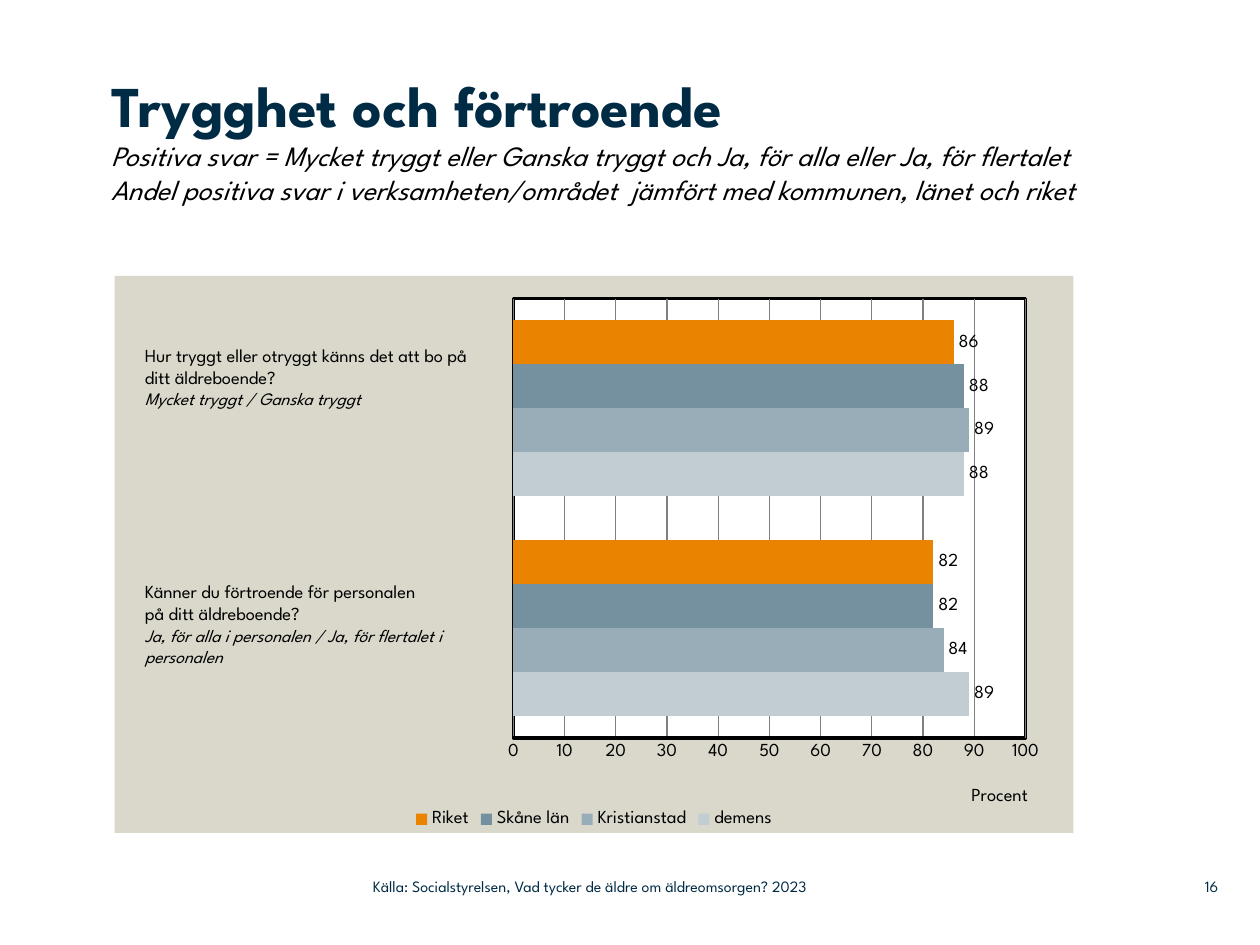
from lxml import etree
from pptx import Presentation
from pptx.chart.data import CategoryChartData
from pptx.dml.color import RGBColor
from pptx.enum import chart as ch, text
from pptx.oxml import ns
from pptx.util import Cm, Pt

FONT = "League Spartan"
NAVY = RGBColor(0x00, 0x2B, 0x45)
BLACK = RGBColor(0, 0, 0)
WHITE = RGBColor(0xFF, 0xFF, 0xFF)
GREY = RGBColor(0x80, 0x80, 0x80)
SAND = RGBColor(0xDA, 0xD7, 0xCB)
PALE = RGBColor(0xC2, 0xCD, 0xD3)
MIST = RGBColor(0x99, 0xAD, 0xB9)
SLATE = RGBColor(0x75, 0x90, 0x9F)
ORANGE = RGBColor(0xE9, 0x83, 0x00)


def style(font, size, color=BLACK, italic=False, bold=False):
    font.name, font.size = FONT, Pt(size)
    font.color.rgb = color
    font.italic, font.bold = italic, bold


def place(parent, index, **parts):
    """Put a manual c:layout into a chart element."""
    for old in parent.findall(ns.qn("c:layout")):
        parent.remove(old)
    layout = etree.Element(ns.qn("c:layout"))
    manual = etree.SubElement(layout, ns.qn("c:manualLayout"))
    for name, value in parts.items():
        etree.SubElement(manual, ns.qn("c:" + name)).set("val", str(value))
    parent.insert(index, layout)


prs = Presentation()
prs.slide_width, prs.slide_height = Cm(25.4), Cm(19.05)
slide = prs.slides.add_slide(prs.slide_layouts[5])

# Title
title = slide.shapes.title
title.left, title.top, title.width, title.height = Cm(2.24), Cm(1.4), Cm(19.69), Cm(4.17)
frame = title.text_frame
frame.margin_left = frame.margin_right = frame.margin_top = frame.margin_bottom = 0
frame.vertical_anchor = text.MSO_ANCHOR.TOP
frame.auto_size = text.MSO_AUTO_SIZE.NONE
head = frame.paragraphs[0]
head.alignment = text.PP_ALIGN.LEFT
run = head.add_run()
run.text = "Trygghet och förtroende"
style(run.font, 33, NAVY, bold=True)
for line in (
    "Positiva svar = Mycket tryggt eller Ganska tryggt och Ja, för alla eller Ja, för flertalet",
    "Andel positiva svar i verksamheten/området  jämfört med kommunen, länet och riket",
):
    head.add_line_break()
    run = head.add_run()
    run.text = line
    style(run.font, 16, italic=True)

# Chart
data = CategoryChartData()
data.categories = ["1", "2"]
rows = [
    ("demens", (89, 88), PALE),
    ("Kristianstad", (84, 89), MIST),
    ("Skåne län", (82, 88), SLATE),
    ("Riket", (82, 86), ORANGE),
]
for name, values, color in rows:
    data.add_series(name, values)
chart = slide.shapes.add_chart(
    ch.XL_CHART_TYPE.BAR_CLUSTERED, Cm(2.31), Cm(5.56), Cm(19.33), Cm(11.23), data
).chart
style(chart.font, 10.5)
chart.has_title = False
chart.has_legend = True
chart.legend.position = ch.XL_LEGEND_POSITION.BOTTOM
chart.legend.include_in_layout = False
style(chart.legend.font, 10.5)

plot = chart.plots[0]
plot.gap_width, plot.overlap = 100, 0
plot.vary_by_categories = False
for series, (name, values, color) in zip(plot.series, rows):
    series.format.fill.solid()
    series.format.fill.fore_color.rgb = color
    labels = series.data_labels
    labels.show_value = True
    labels.position = ch.XL_LABEL_POSITION.OUTSIDE_END
    style(labels.font, 10.5)

chart.category_axis.visible = False
axis = chart.value_axis
axis.minimum_scale, axis.maximum_scale, axis.major_unit = 0, 100, 10
axis.major_tick_mark = ch.XL_TICK_MARK.NONE
axis.format.line.color.rgb, axis.format.line.width = BLACK, Pt(2)
grid = axis.major_gridlines.format.line
grid.color.rgb, grid.width = GREY, Pt(0.75)
style(axis.tick_labels.font, 10.5)
label = axis.axis_title
label.text_frame.text = "Procent"
style(label.text_frame.paragraphs[0].font, 10.5)
place(label._element, 1, xMode="edge", yMode="edge", x=0.89, y=0.91)

space = chart._chartSpace
area = space.chart.plotArea
place(area, 0, layoutTarget="inner", xMode="edge", yMode="edge",
      x=0.416, y=0.041, w=0.534, h=0.789)


def paint(fill, line):
    """Make a c:spPr with a solid fill and an outline, or none."""
    props = etree.Element(ns.qn("c:spPr"))
    solid = etree.SubElement(props, ns.qn("a:solidFill"))
    etree.SubElement(solid, ns.qn("a:srgbClr")).set("val", str(fill))
    edge = etree.SubElement(props, ns.qn("a:ln"))
    if line is None:
        etree.SubElement(edge, ns.qn("a:noFill"))
    else:
        edge.set("w", str(Pt(2)))
        solid = etree.SubElement(edge, ns.qn("a:solidFill"))
        etree.SubElement(solid, ns.qn("a:srgbClr")).set("val", str(line))
    return props


area.append(paint(WHITE, BLACK))
space.chart.addnext(paint(SAND, None))

# Questions, with the answers counted as positive in italics
asks = [
    (6.81, 7.57, 2.06, ["Hur tryggt eller otryggt känns det att bo på ditt äldreboende?",
                        "Mycket tryggt / Ganska tryggt"]),
    (11.58, 7.62, 2.49, ["Känner du förtroende för personalen", "på ditt äldreboende?",
                         "Ja, för alla i personalen / Ja, för flertalet i personalen"]),
]
for top, width, height, lines in asks:
    frame = slide.shapes.add_textbox(Cm(2.67), Cm(top), Cm(width), Cm(height)).text_frame
    frame.word_wrap = True
    frame.text = "\n".join(lines)
    for para in frame.paragraphs:
        style(para.font, 10.5)
    style(para.font, 10, italic=True)

# Footer
notes = [
    (7.52, 11.25, "Källa: Socialstyrelsen, Vad tycker de äldre om äldreomsorgen? 2023",
     text.PP_ALIGN.LEFT),
    (23.37, 1.19, "16", text.PP_ALIGN.RIGHT),
]
for left, width, words, align in notes:
    frame = slide.shapes.add_textbox(Cm(left), Cm(17.5), Cm(width), Cm(0.74)).text_frame
    frame.margin_left = frame.margin_right = frame.margin_top = frame.margin_bottom = 0
    frame.vertical_anchor = text.MSO_ANCHOR.MIDDLE
    frame.word_wrap = True
    frame.text = words
    frame.paragraphs[0].alignment = align
    style(frame.paragraphs[0].font, 9, NAVY)

prs.save("out.pptx")
